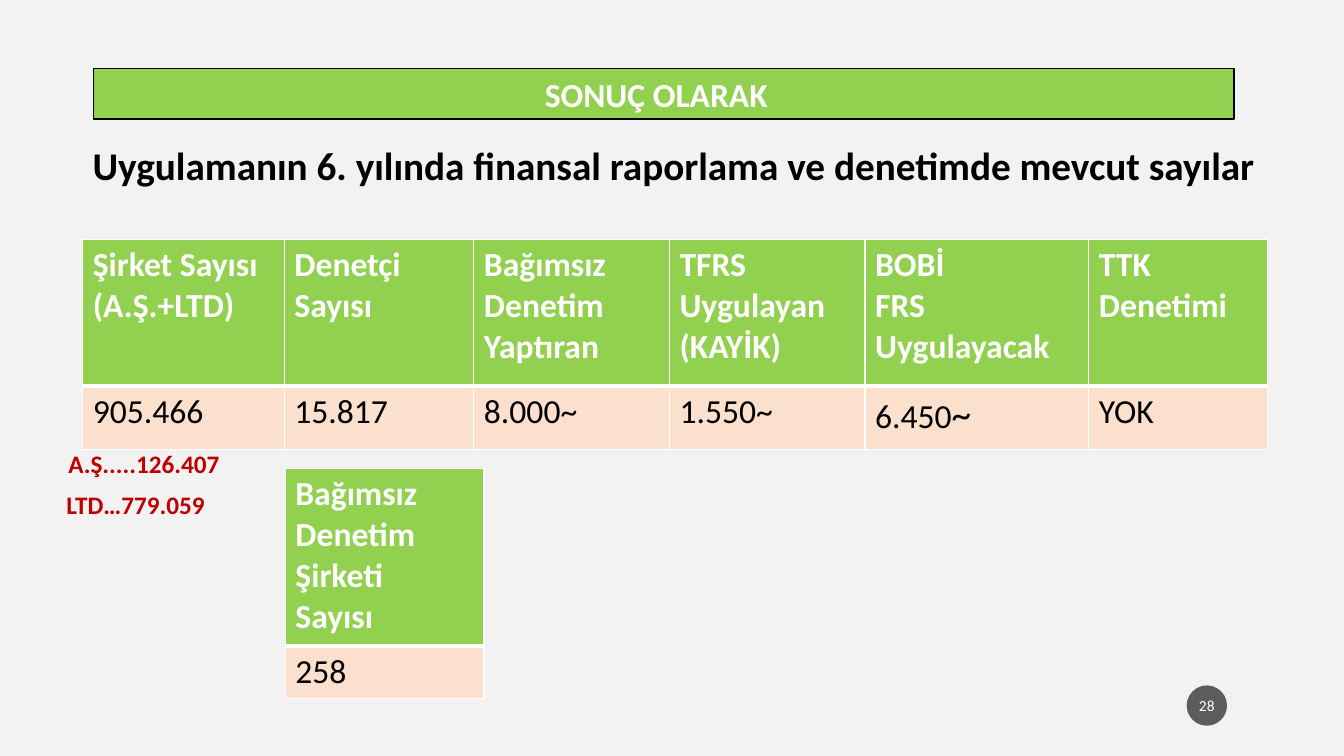
from dataclasses import dataclass

from lxml import etree
from pptx import Presentation
from pptx.dml.color import RGBColor
from pptx.enum.shapes import MSO_SHAPE
from pptx.enum.text import MSO_ANCHOR, PP_ALIGN
from pptx.oxml.ns import qn
from pptx.util import Inches, Pt

RECTANGLE = MSO_SHAPE.RECTANGLE
OVAL = MSO_SHAPE.OVAL
LEFT, CENTER = PP_ALIGN.LEFT, PP_ALIGN.CENTER
TOP, MIDDLE = MSO_ANCHOR.TOP, MSO_ANCHOR.MIDDLE


@dataclass(frozen=True)
class Theme:
    font: str = "Calibri"
    background: str = "F2F2F2"
    green: str = "92D050"
    peach: str = "FBE0CD"
    white: str = "FFFFFF"
    black: str = "000000"
    red: str = "C00000"
    badge: str = "1D1D1D"
    heading: int = 28
    body: int = 24
    note: int = 18
    number: int = 11


THEME = Theme()


def color(value):
    return RGBColor.from_string(value)


def add_run(paragraph, text, size, ink, bold=False):
    run = paragraph.add_run()
    run.text = text
    run.font.name = THEME.font
    run.font.size = Pt(size)
    run.font.bold = bold
    run.font.color.rgb = color(ink)


def set_frame(frame, margins=(0.1, 0.05, 0.1, 0.05), anchor=TOP):
    frame.word_wrap = True
    frame.vertical_anchor = anchor
    left, top, right, bottom = margins
    frame.margin_left, frame.margin_top = Inches(left), Inches(top)
    frame.margin_right, frame.margin_bottom = Inches(right), Inches(bottom)


def add_text(slide, box, text, size, ink):
    shape = slide.shapes.add_textbox(*map(Inches, box))
    set_frame(shape.text_frame)
    add_run(shape.text_frame.paragraphs[0], text, size, ink, bold=True)


def add_label(slide, kind, box, fill, text, size, bold, margins, anchor):
    """Add a filled shape with one centred line of white text."""
    shape = slide.shapes.add_shape(kind, *map(Inches, box))
    shape.shadow.inherit = False
    shape.fill.solid()
    shape.fill.fore_color.rgb = color(fill)
    shape.line.fill.background()
    set_frame(shape.text_frame, margins, anchor)
    paragraph = shape.text_frame.paragraphs[0]
    paragraph.alignment = CENTER
    add_run(paragraph, text, size, THEME.white, bold)
    return shape


def set_opacity(shape, percent):
    fill_color = shape.fill._xPr.find(qn("a:solidFill"))[0]
    etree.SubElement(fill_color, qn("a:alpha"), val=str(percent * 1000))


def set_borders(cell, widths):
    """Draw white borders; widths are points for left, right, top, bottom."""
    properties = cell._tc.get_or_add_tcPr()
    for index, (side, width) in enumerate(zip("LRTB", widths)):
        line = etree.Element(qn(f"a:ln{side}"), w=str(Pt(width)))
        fill = etree.SubElement(line, qn("a:solidFill"))
        etree.SubElement(fill, qn("a:srgbClr"), val=THEME.white)
        properties.insert(index, line)


def fill_cell(cell, paragraphs, is_header):
    """Write paragraphs, each a list of (text, size) runs, into a cell."""
    cell.fill.solid()
    cell.fill.fore_color.rgb = color(THEME.green if is_header else THEME.peach)
    set_borders(cell, (1, 1, 1, 3) if is_header else (1, 1, 3, 1))
    ink = THEME.white if is_header else THEME.black
    frame = cell.text_frame
    for index, runs in enumerate(paragraphs):
        paragraph = frame.add_paragraph() if index else frame.paragraphs[0]
        paragraph.alignment = LEFT
        for text, size in runs:
            add_run(paragraph, text, size, ink, is_header)


def add_figures(slide, left, top, widths, heights, headers, values):
    """Add a table with one header row and one row of values."""
    table = slide.shapes.add_table(
        2, len(widths), Inches(left), Inches(top),
        Inches(sum(widths)), Inches(sum(heights))).table
    table.first_row = False
    table.horz_banding = False
    for row, height in zip(table.rows, heights):
        row.height = Inches(height)
    for index, width in enumerate(widths):
        table.columns[index].width = Inches(width)
        lines = [[(line, THEME.body)] for line in headers[index]]
        fill_cell(table.cell(0, index), lines, True)
        fill_cell(table.cell(1, index), [values[index]], False)


def main():
    presentation = Presentation()
    presentation.slide_width = Inches(13.33)
    presentation.slide_height = Inches(7.5)
    slide = presentation.slides.add_slide(presentation.slide_layouts[6])
    slide.background.fill.solid()
    slide.background.fill.fore_color.rgb = color(THEME.background)

    # Title bar and heading
    banner = add_label(slide, RECTANGLE, (0.93, 0.68, 11.31, 0.5), THEME.green,
                       "SONUÇ OLARAK", THEME.body, True,
                       (0.1, 0.05, 0.25, 0.05), TOP)
    banner.line.color.rgb = color(THEME.black)
    banner.line.width = Pt(1)
    add_text(slide, (0.82, 1.35, 11.75, 1.04),
             "Uygulamanın 6. yılında finansal raporlama ve denetimde mevcut sayılar",
             THEME.heading, THEME.black)

    # Main figures
    headers = [
        ["Şirket Sayısı", "(A.Ş.+LTD)"],
        ["Denetçi Sayısı"],
        ["Bağımsız Denetim Yaptıran"],
        ["TFRS", "Uygulayan", "(KAYİK)"],
        ["BOBİ", "FRS", "Uygulayacak"],
        ["TTK", "Denetimi"],
    ]
    values = [[(text, THEME.body)] for text in
              ("905.466", "15.817", "8.000~", "1.550~", "6.450", "YOK")]
    values[4].append(("~", THEME.heading))
    add_figures(slide, 0.82, 2.38, (2, 1.88, 1.94, 1.94, 2.22, 1.77),
                (1.45, 0.63), headers, values)

    # Audit firms
    add_figures(slide, 2.83, 4.65, (1.97,), (1.76, 0.52),
                [["Bağımsız Denetim Şirketi", "Sayısı"]],
                [[("258", THEME.body)]])

    # Company breakdown
    add_text(slide, (0.58, 4.4, 1.9, 0.4), "A.Ş.....126.407",
             THEME.note, THEME.red)
    add_text(slide, (0.56, 4.81, 1.86, 0.4), "LTD…779.059",
             THEME.note, THEME.red)

    # Page number
    badge = add_label(slide, OVAL, (11.77, 6.8, 0.4, 0.4), THEME.badge, "28",
                      THEME.number, False, (0.02, 0.05, 0.02, 0.05), MIDDLE)
    set_opacity(badge, 70)

    presentation.save("out.pptx")


if __name__ == "__main__":
    main()
